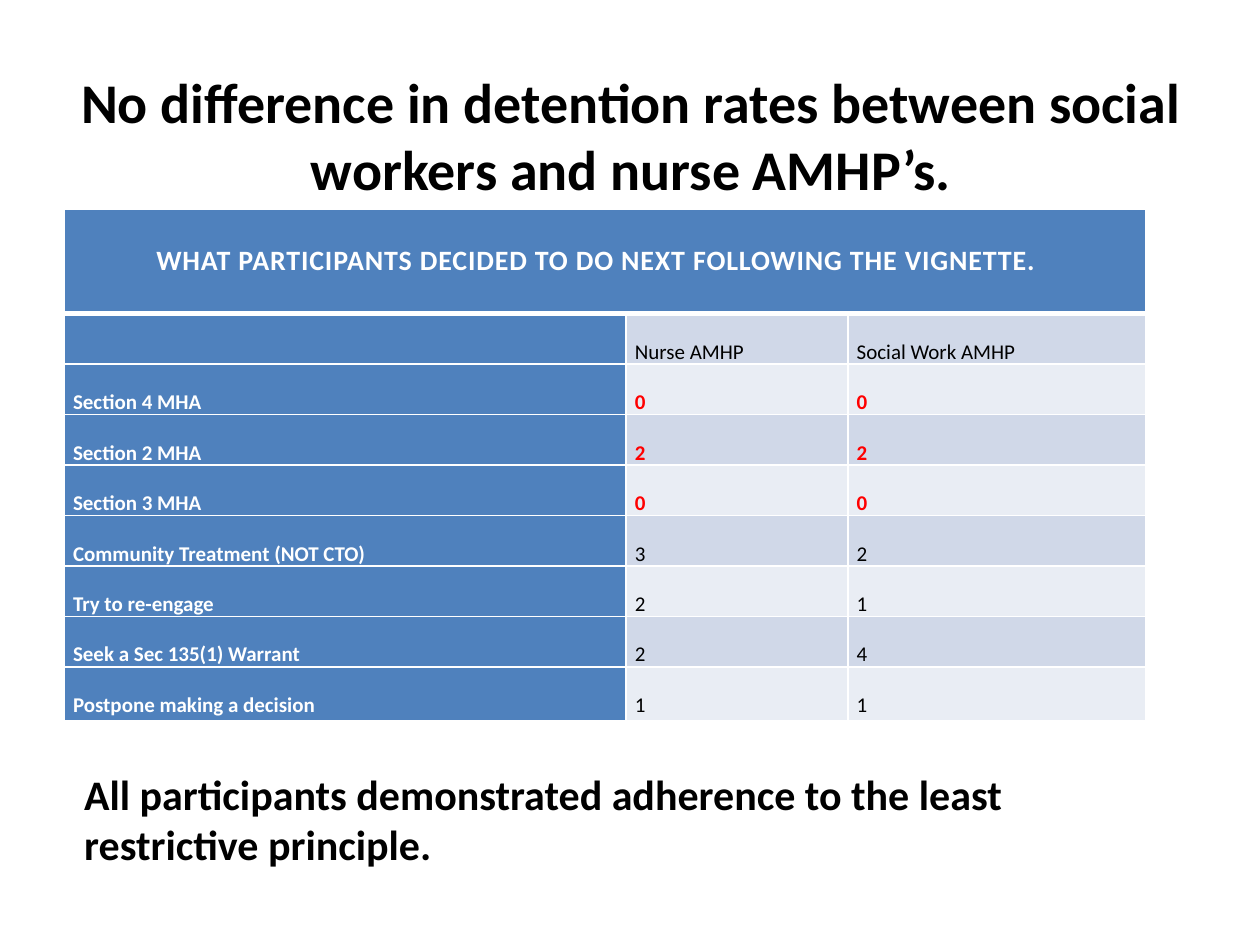
from lxml.etree import SubElement
from pptx import Presentation
from pptx.dml.color import RGBColor
from pptx.enum.text import MSO_ANCHOR as Anchor, PP_ALIGN as Align
from pptx.oxml.ns import qn
from pptx.util import Inches, Pt

THEME = {
    "font": "Calibri",
    "title": 32, "heading": 16, "cell": 12, "conclusion": 24,
    "black": "000000", "white": "FFFFFF", "red": "FF0000",
    "blue": "4F81BD", "bands": ("D0D8E8", "E9EDF4"),
}

TITLE = "No difference in detention rates between social workers and nurse AMHP’s."
CONCLUSION = "All participants demonstrated adherence to the least restrictive principle."
HEADING = "WHAT PARTICIPANTS DECIDED TO DO NEXT FOLLOWING THE VIGNETTE."
ROWS = [
    ("", "Nurse AMHP", "Social Work AMHP"),
    ("Section 4 MHA", "0", "0"),
    ("Section 2 MHA", "2", "2"),
    ("Section 3 MHA", "0", "0"),
    ("Community Treatment (NOT CTO)", "3", "2"),
    ("Try to re-engage", "2", "1"),
    ("Seek a Sec 135(1) Warrant", "2", "4"),
    ("Postpone making a decision", "1", "1"),
]
DETENTION_ROWS = range(1, 4)
COLUMN_WIDTHS = (4.46, 1.76, 2.36)
ROW_HEIGHTS = (0.83, *[0.37] * 7, 0.43)


def write_text(frame, text, size, color="black", bold=True, align=Align.LEFT,
               line_spacing=None, before=0, after=0, tracking=0):
    para = frame.paragraphs[0]
    para.alignment = align
    para.line_spacing = line_spacing
    para.space_before, para.space_after = Pt(before), Pt(after)
    if not text:
        para.font.size = Pt(size)
        return
    span = para.add_run()
    span.text = text
    font = span.font
    font.name, font.size, font.bold = THEME["font"], Pt(size), bold
    font.color.rgb = RGBColor.from_string(THEME[color])
    if tracking:
        font._element.set("spc", str(int(tracking * 100)))


def add_text_box(slide, bounds, text, size, anchor=Anchor.TOP, **text_format):
    box = slide.shapes.add_textbox(*map(Inches, bounds))
    box.text_frame.word_wrap = True
    box.text_frame.vertical_anchor = anchor
    write_text(box.text_frame, text, size, **text_format)


def style_cell(cell, fill, bottom=1, top=1):
    """Set the fill, tight margins and white borders (widths in points)."""
    cell.margin_left = cell.margin_right = Inches(0.07)
    cell.margin_top = cell.margin_bottom = 0
    properties = cell._tc.get_or_add_tcPr()
    for side, width in (("L", 1), ("R", 1), ("T", top), ("B", bottom)):
        line = SubElement(properties, qn(f"a:ln{side}"), w=str(Pt(width)))
        solid = SubElement(line, qn("a:solidFill"))
        SubElement(solid, qn("a:srgbClr"), val=THEME["white"])
    cell.fill.solid()
    cell.fill.fore_color.rgb = RGBColor.from_string(fill)


def add_decision_table(slide, bounds):
    frame = slide.shapes.add_table(len(ROW_HEIGHTS), len(COLUMN_WIDTHS), *map(Inches, bounds))
    table = frame.table
    for column, width in zip(table.columns, COLUMN_WIDTHS):
        column.width = Inches(width)
    for row, height in zip(table.rows, ROW_HEIGHTS):
        row.height = Inches(height)
    frame.height = Inches(bounds[3])

    for cell in table.rows[0].cells:
        style_cell(cell, THEME["blue"], bottom=3)
    heading = table.cell(0, 0)
    heading.merge(table.cell(0, len(COLUMN_WIDTHS) - 1))
    heading.margin_right = Inches(0.2)
    write_text(heading.text_frame, HEADING, THEME["heading"], color="white",
               align=Align.CENTER, line_spacing=2.0, after=6, tracking=0.5)

    for index, values in enumerate(ROWS):
        detention = index in DETENTION_ROWS
        for column, text in enumerate(values):
            is_label = column == 0
            cell = table.cell(index + 1, column)
            style_cell(cell, THEME["blue"] if is_label else THEME["bands"][index % 2],
                       top=1 if index else 3)
            color = "white" if is_label else "red" if detention else "black"
            write_text(cell.text_frame, text, THEME["cell"], color=color,
                       bold=is_label or detention, align=Align.JUSTIFY, line_spacing=2.0)


def main():
    deck = Presentation()
    deck.slide_width, deck.slide_height = Inches(10), Inches(7.5)
    slide = deck.slides.add_slide(deck.slide_layouts[6])
    add_text_box(slide, (0.51, 0.44, 9, 1.26), TITLE, THEME["title"],
                 anchor=Anchor.MIDDLE, align=Align.CENTER)
    add_decision_table(slide, (0.51, 1.66, 8.58, 4.05))
    add_text_box(slide, (0.57, 6.05, 8.61, 0.91), CONCLUSION, THEME["conclusion"])
    deck.save("out.pptx")


if __name__ == "__main__":
    main()
